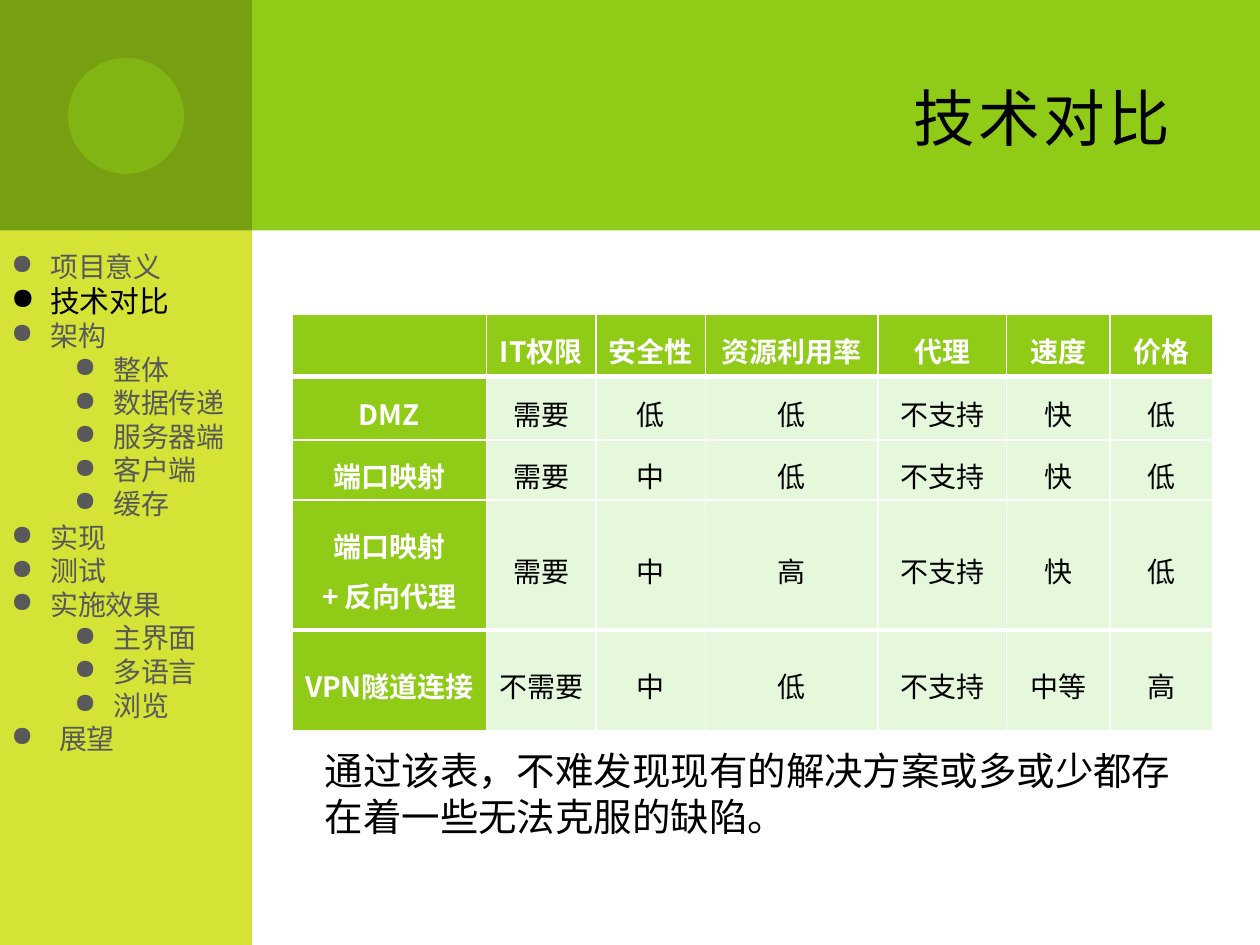
from typing import NamedTuple

from lxml.etree import SubElement
from pptx import Presentation
from pptx.dml.color import RGBColor
from pptx.enum.shapes import MSO_SHAPE as Kind
from pptx.enum.text import MSO_ANCHOR as Anchor, MSO_AUTO_SIZE as Fit, PP_ALIGN as Align
from pptx.oxml.ns import qn
from pptx.util import Inches, Pt

GREEN = RGBColor(0x8F, 0xCB, 0x17)
DARK = RGBColor(0x76, 0x9F, 0x11)
LIME = RGBColor(0xD4, 0xE3, 0x36)
PALE = RGBColor(0xE6, 0xF8, 0xDC)
GREY = RGBColor(0x59, 0x59, 0x59)
BLACK = RGBColor(0, 0, 0)
WHITE = RGBColor(0xFF, 0xFF, 0xFF)
SANS = "Noto Sans CJK SC"


class Block(NamedTuple):
    kind: Kind
    box: tuple
    color: RGBColor
    alpha: int = 100


class Item(NamedTuple):
    text: str
    level: int = 0
    hang: float = 0.31
    active: bool = False


BLOCKS = [
    Block(Kind.RECTANGLE, (0.5, 0, 9.5, 1.83), GREEN),
    Block(Kind.RECTANGLE, (0, 0, 2, 7.5), LIME),
    Block(Kind.RECTANGLE, (0, 0, 2, 1.83), DARK),
    Block(Kind.OVAL, (0.54, 0.46, 0.92, 0.92), GREEN, 50),
]
MENU = [
    Item("项目意义"), Item("技术对比", active=True), Item("架构"),
    Item("整体", 1), Item("数据传递", 1), Item("服务器端", 1),
    Item("客户端", 1), Item("缓存", 1),
    Item("实现"), Item("测试"), Item("实施效果"),
    Item("主界面", 1), Item("多语言", 1), Item("浏览", 1),
    Item("展望", hang=0.38),
]
COLS = [1.54, 0.87, 0.87, 1.37, 1.02, 0.82, 0.82]
ROWS = [0.5, 0.5, 0.48, 1.03, 0.49]
DATA = [
    ["", "IT权限", "安全性", "资源利用率", "代理", "速度", "价格"],
    ["DMZ", "需要", "低", "低", "不支持", "快", "低"],
    ["端口映射", "需要", "中", "低", "不支持", "快", "低"],
    ["端口映射\n+ 反向代理", "需要", "中", "高", "不支持", "快", "低"],
    ["VPN隧道连接", "不需要", "中", "低", "不支持", "中等", "高"],
]


def inches(box: tuple) -> list:
    return [Inches(v) for v in box]


def write(para, text: str, size=16, color=BLACK, bold=False, font=SANS,
          align=Align.LEFT, spacing=None) -> None:
    """Fill a paragraph; a newline becomes a line break."""
    para.alignment = align
    para.line_spacing = spacing
    for i, part in enumerate(text.split("\n")):
        if i:
            para.add_line_break()
        run = para.add_run()
        run.text = part
        run.font.size, run.font.bold, run.font.name = Pt(size), bold, font
        run.font.color.rgb = color
        SubElement(run.font._element, qn("a:ea"), typeface=SANS)


def draw(shapes, block: Block) -> None:
    shape = shapes.add_shape(block.kind, *inches(block.box))
    shape.shadow.inherit = False
    shape.fill.solid()
    shape.fill.fore_color.rgb = block.color
    shape.line.fill.background()
    if block.alpha < 100:
        tint = shape.element.spPr.find(f".//{qn('a:srgbClr')}")
        SubElement(tint, qn("a:alpha"), val=str(block.alpha * 1000))


def add_box(shapes, box: tuple):
    frame = shapes.add_textbox(*inches(box)).text_frame
    frame.word_wrap = True
    frame.auto_size = Fit.SHAPE_TO_FIT_TEXT
    return frame


def add_bullet(para, item: Item) -> None:
    para.level = item.level
    props = para._p.get_or_add_pPr()
    props.set("marL", str(Inches(item.hang + 0.5 * item.level)))
    props.set("indent", str(-Inches(item.hang)))
    SubElement(props, qn("a:buChar"), char="●")
    tabs = SubElement(props, qn("a:tabLst"))
    SubElement(tabs, qn("a:tab"), pos=str(Inches(0.39)), algn="l")


def add_edges(cell, top: int, bottom: int) -> None:
    props = cell._tc.get_or_add_tcPr()
    for side, width in (("L", 1), ("R", 1), ("T", top), ("B", bottom)):
        line = SubElement(props, qn(f"a:ln{side}"), w=str(Pt(width)))
        fill = SubElement(line, qn("a:solidFill"))
        SubElement(fill, qn("a:srgbClr"), val=str(WHITE))


def add_grid(shapes) -> None:
    box = (2.32, 2.49, sum(COLS), sum(ROWS))
    table = shapes.add_table(len(ROWS), len(COLS), *inches(box)).table
    for col, width in zip(table.columns, COLS):
        col.width = Inches(width)
    last = len(ROWS) - 1
    for r, (row, height) in enumerate(zip(DATA, ROWS)):
        table.rows[r].height = Inches(height)
        for c, text in enumerate(row):
            cell = table.cell(r, c)
            head = r == 0 or c == 0
            add_edges(cell, top=3 if r == last else 1, bottom=3 if r == 0 else 1)
            cell.fill.solid()
            cell.fill.fore_color.rgb = GREEN if head else PALE
            cell.vertical_anchor = Anchor.MIDDLE
            cell.margin_left = cell.margin_right = Inches(0.07)
            cell.margin_top = cell.margin_bottom = 0
            if text:
                write(cell.text_frame.paragraphs[0], text, bold=head,
                      color=WHITE if head else BLACK,
                      align=Align.CENTER, spacing=1.25)


def main() -> None:
    deck = Presentation()
    deck.slide_width, deck.slide_height = Inches(10), Inches(7.5)
    slide = deck.slides.add_slide(deck.slide_layouts[5])
    shapes = slide.shapes

    # Banner and side bar
    for block in BLOCKS:
        draw(shapes, block)

    # Title, raised above the banner
    title = shapes.title
    title.element.getparent().append(title.element)
    title.left, title.top, title.width, title.height = inches((2.67, 0.25, 6.83, 1.25))
    title.text_frame.vertical_anchor = Anchor.MIDDLE
    para = title.text_frame.paragraphs[0]
    write(para, "技术对比", size=44, font="Roboto", align=Align.RIGHT)
    props = para.runs[0].font._element
    props.set("spc", "200")
    props.set("cap", "small")

    # Comparison table and its conclusion
    add_grid(shapes)
    note = add_box(shapes, (2.48, 5.88, 7.09, 0.84))
    write(note.paragraphs[0],
          "通过该表，不难发现现有的解决方案或多或少都存在着一些无法克服的缺陷。", size=22)

    # Side menu
    menu = add_box(shapes, (-0.01, 1.93, 2.02, 4.16))
    for i, item in enumerate(MENU):
        para = menu.add_paragraph() if i else menu.paragraphs[0]
        write(para, item.text, size=17 if item.active else 16,
              color=BLACK if item.active else GREY)
        add_bullet(para, item)

    deck.save("out.pptx")


if __name__ == "__main__":
    main()
